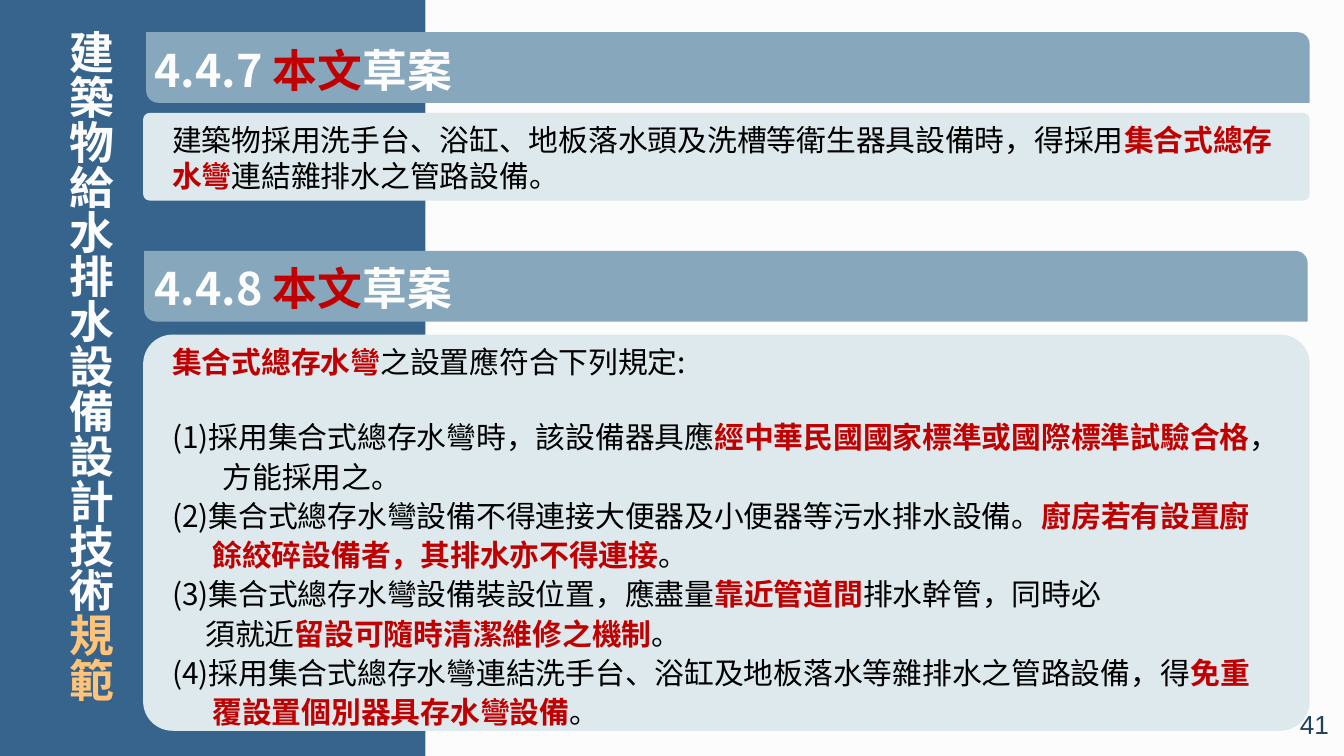
from lxml import etree
from pptx import Presentation
from pptx.dml.color import RGBColor
from pptx.enum.shapes import MSO_SHAPE
from pptx.enum.text import MSO_ANCHOR, PP_ALIGN
from pptx.oxml.ns import qn
from pptx.util import Inches, Pt

FONT = "Noto Sans CJK SC"
WHITE = RGBColor(0xFC, 0xFC, 0xFC)
BLACK = RGBColor(0, 0, 0)
RED = RGBColor(0xC0, 0, 0)
NAVY = RGBColor(0x37, 0x64, 0x8C)
STEEL = RGBColor(0x86, 0xA7, 0xBC)
PALE = RGBColor(0xDD, 0xE9, 0xEC)
GOLD = RGBColor(0xFF, 0xC4, 0x79)
INK = RGBColor(0x1F, 0x43, 0x59)

TITLE = [("建築物給水排水設備設計技術", WHITE), ("規範", GOLD)]
PAGE_NUMBER = "41"

# Body paragraphs: (hanging inches, first-line inches, pieces);
# every second piece is emphasised in bold red.
TRAP_USE = [
    (0, 0, ["建築物採用洗手台、浴缸、地板落水頭及洗槽等衛生器具設備時，得採用",
            "集合式總存水彎", "連結雜排水之管路設備。"]),
]
TRAP_RULES = [
    (0, 0, ["", "集合式總存水彎", "之設置應符合下列規定:"]),
    (0.5, -0.5, ["(1)採用集合式總存水彎時，該設備器具應",
                 "經中華民國國家標準或國際標準試驗合格", "，方能採用之。"]),
    (0.4, -0.4, ["(2)集合式總存水彎設備不得連接大便器及小便器等污水排水設備。",
                 "廚房若有設置廚餘絞碎設備者，其排水亦不得連接", "。"]),
    (0, 0, ["(3)集合式總存水彎設備裝設位置，應盡量", "靠近管道間",
            "排水幹管，同時必"]),
    (0.33, 0, ["須就近", "留設可隨時清潔維修之機制", "。"]),
    (0.4, -0.4, ["(4)採用集合式總存水彎連結洗手台、浴缸及地板落水等雜排水之管路設備，得",
                 "免重覆設置個別器具存水彎設備", "。"]),
]
# number, bar left, bar top, panel top, panel height, text width, paragraphs
SECTIONS = [
    ("4.4.7", 1.45, 0.32, 1.12, 0.87, 11.19, TRAP_USE),
    ("4.4.8", 1.43, 2.49, 3.32, 3.93, 11, TRAP_RULES),
]


def add_block(s, kind, box, color, *adjustments):
    sp = s.shapes.add_shape(kind, *map(Inches, box))
    sp.shadow.inherit = False
    sp.fill.solid()
    sp.fill.fore_color.rgb = color
    sp.line.fill.background()
    for i, value in enumerate(adjustments):
        sp.adjustments[i] = value


def add_text_frame(s, *box):
    tf = s.shapes.add_textbox(*map(Inches, box)).text_frame
    tf.word_wrap = True
    return tf


def add_run(p, text, size, color, bold=False, font=FONT):
    r = p.add_run()
    r.text = text
    r.font.name, r.font.size, r.font.bold = font, Pt(size), bold
    r.font.color.rgb = color
    ea = etree.SubElement(r.font._element, qn("a:ea"))
    ea.set("typeface", font)


def add_body(tf, paragraphs):
    for i, (hang, first, pieces) in enumerate(paragraphs):
        p = tf.add_paragraph() if i else tf.paragraphs[0]
        pPr = p._p.get_or_add_pPr()
        pPr.set("marL", str(Inches(hang)))
        pPr.set("indent", str(Inches(first)))
        if i:
            p.line_spacing = Pt(28)
        if i == 1:
            p.space_before = Pt(26)
        for j, piece in enumerate(pieces):
            if piece:
                strong = j % 2 == 1
                add_run(p, piece, 21.3, RED if strong else BLACK, strong)


def add_section(s, number, left, bar_top, panel_top, panel_height, width, body):
    add_block(s, MSO_SHAPE.ROUND_2_DIAG_RECTANGLE,
              (left, bar_top, 11.54, 0.7), STEEL, 0, 0.17)
    tf = add_text_frame(s, 1.43, bar_top + 0.05, 8.02, 0.64)
    for text, color in [(number + " ", WHITE), ("本文", RED), ("草案", WHITE)]:
        add_run(tf.paragraphs[0], text, 32, color, True)
    add_block(s, MSO_SHAPE.ROUNDED_RECTANGLE,
              (1.42, panel_top, 11.57, panel_height), PALE, 0.074)
    add_body(add_text_frame(s, 1.61, panel_top + 0.04, width, panel_height), body)


def add_title(s):
    tf = add_text_frame(s, 0.5, 0.2, 0.87, 7)
    tf.vertical_anchor = MSO_ANCHOR.MIDDLE
    tf.margin_top = tf.margin_bottom = Inches(0.1)
    tf._txBody.bodyPr.set("vert", "eaVert")
    p = tf.paragraphs[0]
    p.alignment, p.line_spacing = PP_ALIGN.CENTER, 1.15
    for text, color in TITLE:
        add_run(p, text, 32, color, True)


def add_page_number(s):
    tf = add_text_frame(s, 10.28, 6.98, 3, 0.4)
    tf.vertical_anchor = MSO_ANCHOR.MIDDLE
    p = tf.paragraphs[0]
    p.alignment = PP_ALIGN.RIGHT
    add_run(p, PAGE_NUMBER, 18.7, INK, font="Arial")


def main():
    prs = Presentation()
    prs.slide_width, prs.slide_height = Inches(13.33), Inches(7.5)
    s = prs.slides.add_slide(prs.slide_layouts[6])
    s.background.fill.solid()
    s.background.fill.fore_color.rgb = WHITE
    add_block(s, MSO_SHAPE.RECTANGLE, (0, 0, 4.22, 7.5), NAVY)
    add_page_number(s)
    for section in SECTIONS:
        add_section(s, *section)
    add_title(s)
    prs.save("out.pptx")


if __name__ == "__main__":
    main()
